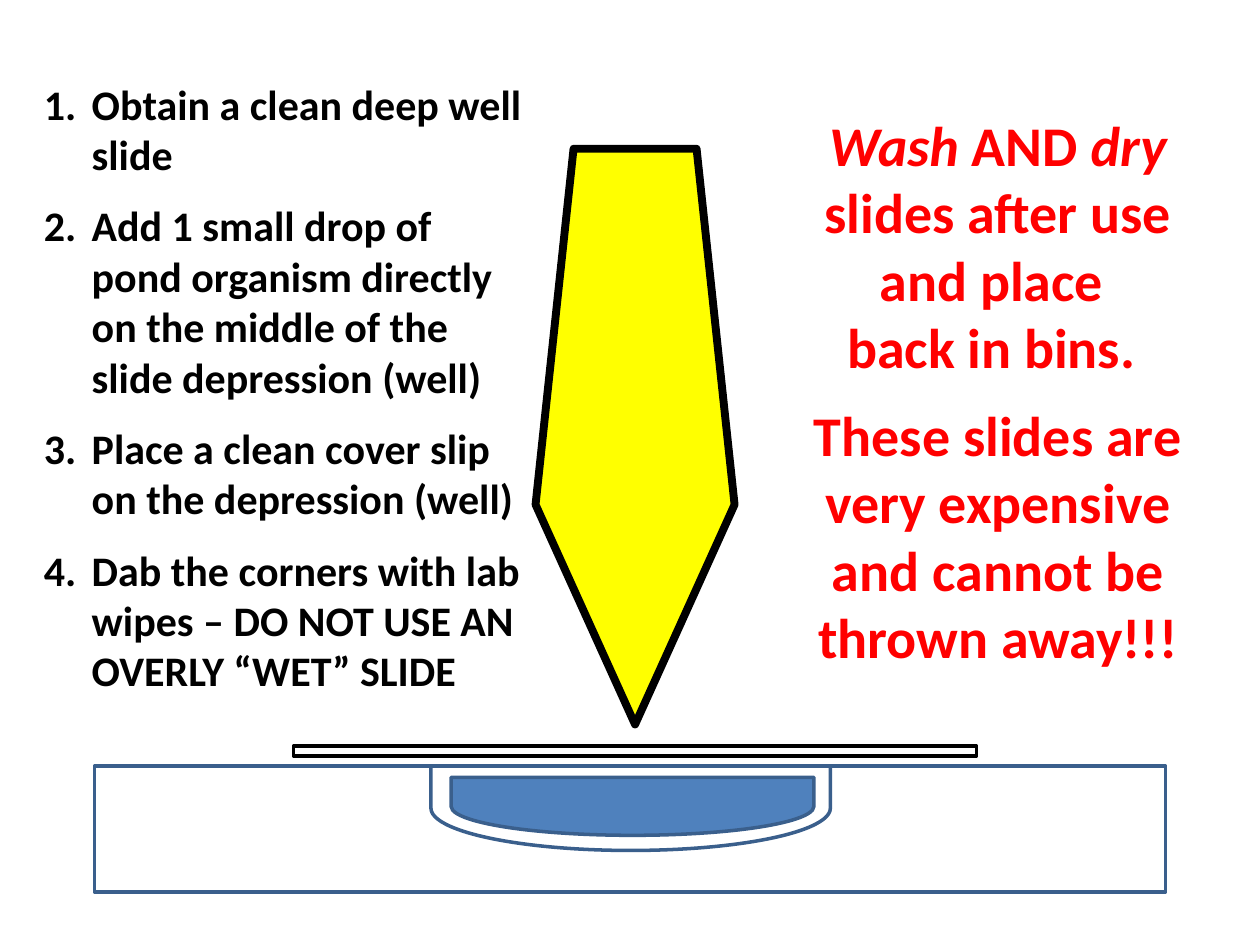
from lxml import etree
from pptx import Presentation
from pptx.dml.color import RGBColor
from pptx.enum.shapes import MSO_SHAPE
from pptx.enum.text import MSO_AUTO_SIZE, PP_ALIGN
from pptx.oxml.ns import qn
from pptx.util import Inches, Pt

RECTANGLE = MSO_SHAPE.RECTANGLE
WELL = MSO_SHAPE.FLOWCHART_DELAY
PENTAGON = MSO_SHAPE.REGULAR_PENTAGON
CENTER = PP_ALIGN.CENTER
LEFT = PP_ALIGN.LEFT
GROW = MSO_AUTO_SIZE.SHAPE_TO_FIT_TEXT

WHITE, BLACK, RED, YELLOW = "FFFFFF", "000000", "FF0000", "FFFF00"
GLASS_EDGE, WATER = "3A5F8C", "4F81BD"

STEPS = [
    "Obtain a clean deep well slide",
    "Add 1 small drop of pond organism directly on the middle of the slide depression (well)",
    "Place a clean cover slip on the depression (well)",
    "Dab the corners with lab wipes – DO NOT USE AN OVERLY “WET” SLIDE",
]
WASHING = [("Wash", True), (" AND ", False), ("dry", True), (" slides after use and place ", False)]
BINS = [("back in bins. ", False)]
WARNING = [("These slides are very expensive and cannot be thrown away!!!", False)]


def color(value):
    return RGBColor.from_string(value)


class SlideBuilder:
    """Holds the text style and the current slide, and adds elements to it."""

    font_name = "Calibri"
    gap = Pt(12)
    indent = Inches(0.38)

    def __init__(self, page):
        self.page = page

    def shape(self, kind, left, top, width, height, fill, line, weight=2, rotation=0):
        shape = self.page.shapes.add_shape(
            kind, Inches(left), Inches(top), Inches(width), Inches(height))
        shape.shadow.inherit = False
        shape.rotation = rotation
        shape.fill.solid()
        shape.fill.fore_color.rgb = color(fill)
        shape.line.color.rgb = color(line)
        shape.line.width = Pt(weight)
        return shape

    def text_frame(self, left, top, width, height):
        box = self.page.shapes.add_textbox(
            Inches(left), Inches(top), Inches(width), Inches(height))
        frame = box.text_frame
        frame.word_wrap = True
        frame.auto_size = GROW
        return frame

    def paragraph(self, frame, spans, size, ink, align=LEFT, spaced=False):
        first = frame.paragraphs[0]
        para = frame.add_paragraph() if first.runs else first
        para.alignment = align
        if spaced:
            para.space_before = self.gap
        para.font.name = self.font_name
        para.font.size = Pt(size)
        para.font.bold = True
        para.font.color.rgb = color(ink)
        for text, italic in spans:
            span = para.add_run()
            span.text = text
            if italic:
                span.font.italic = True
        return para

    def numbered_list(self, frame, items, size, ink):
        for index, item in enumerate(items):
            para = self.paragraph(frame, [(item, False)], size, ink, spaced=index > 0)
            properties = para._p.get_or_add_pPr()
            properties.set("marL", str(self.indent))
            properties.set("indent", str(-self.indent))
            bullet = etree.Element(qn("a:buAutoNum"), type="arabicPeriod")
            properties.find(qn("a:defRPr")).addprevious(bullet)


def main():
    deck = Presentation()
    deck.slide_width, deck.slide_height = Inches(10), Inches(7.5)
    builder = SlideBuilder(deck.slides.add_slide(deck.slide_layouts[6]))

    builder.shape(RECTANGLE, 0.75, 6.08, 8.5, 1, WHITE, GLASS_EDGE)
    builder.shape(WELL, 4.67, 4.83, 0.67, 3.17, WHITE, GLASS_EDGE, rotation=90)
    builder.shape(WELL, 4.79, 4.96, 0.46, 2.88, WATER, GLASS_EDGE, rotation=90)
    builder.shape(RECTANGLE, 2.33, 5.92, 5.42, 0.08, WHITE, BLACK)
    builder.shape(PENTAGON, 4.25, 1.18, 1.58, 4.57, YELLOW, BLACK, 4.5, rotation=180)

    steps = builder.text_frame(0.25, 0.57, 4, 5.02)
    builder.numbered_list(steps, STEPS, 24, BLACK)

    notice = builder.text_frame(6.17, 0.83, 3.5, 4.58)
    for spans in (WASHING, BINS, WARNING):
        builder.paragraph(notice, spans, 32, RED, CENTER, spaced=spans is WARNING)

    deck.save("out.pptx")


if __name__ == "__main__":
    main()
